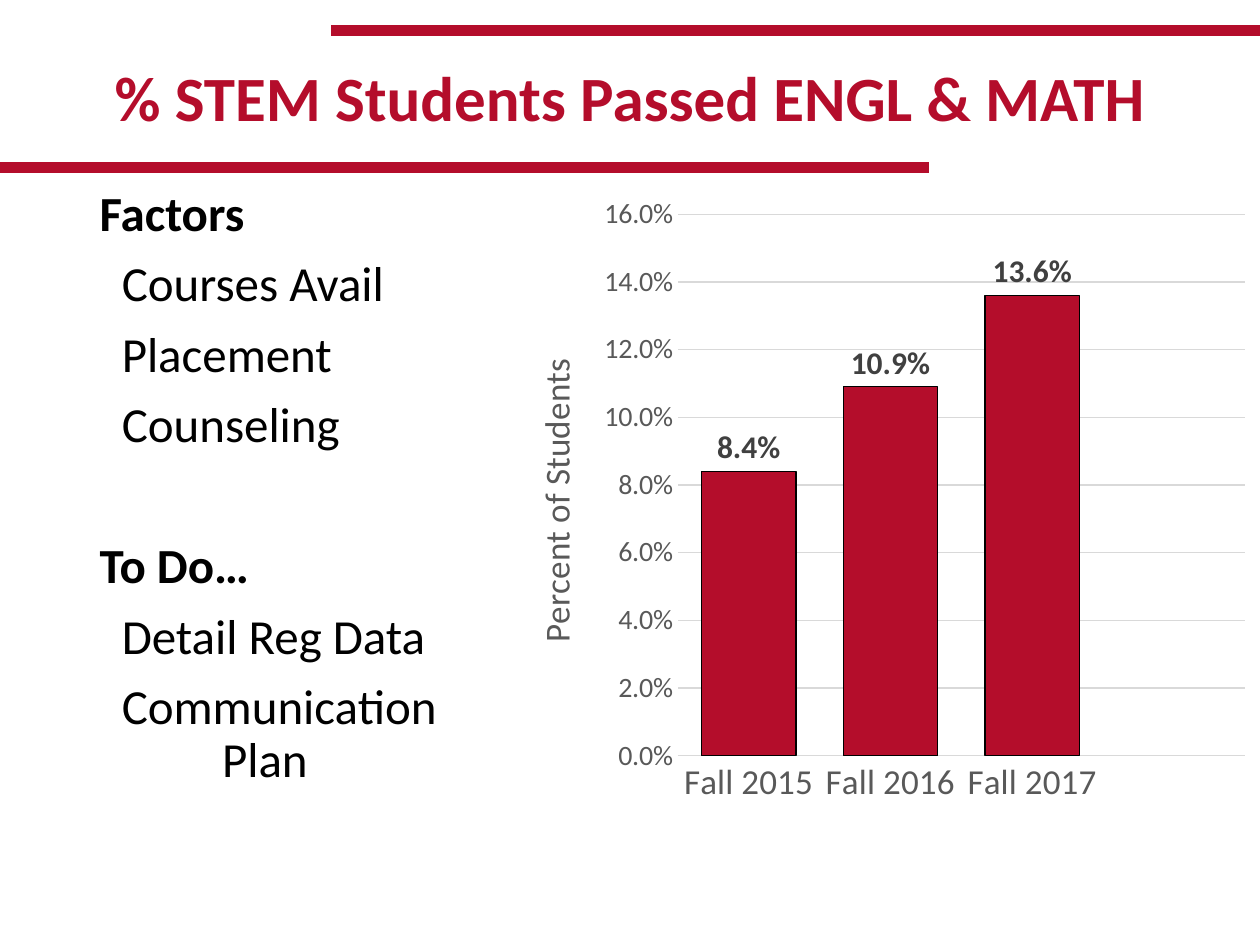
from dataclasses import dataclass

from lxml.etree import SubElement as Sub
from pptx import Presentation
from pptx.chart.data import CategoryChartData as ChartData
from pptx.dml.color import RGBColor as Rgb
from pptx.enum.chart import XL_CHART_TYPE as Kind
from pptx.enum.chart import XL_LABEL_POSITION as Spot
from pptx.enum.chart import XL_TICK_MARK as Tick
from pptx.enum.shapes import MSO_CONNECTOR as Conn
from pptx.enum.text import MSO_ANCHOR as Anchor
from pptx.enum.text import MSO_AUTO_SIZE as Fit
from pptx.enum.text import PP_ALIGN as Align
from pptx.oxml.ns import qn
from pptx.util import Pt


# Colours and type sizes
@dataclass(frozen=True)
class Theme:
    font: str = "Calibri"
    red: Rgb = Rgb(0xB4, 0x0D, 0x2B)
    black: Rgb = Rgb(0, 0, 0)
    dark: Rgb = Rgb(0x40, 0x40, 0x40)
    gray: Rgb = Rgb(0x59, 0x59, 0x59)
    pale: Rgb = Rgb(0xD9, 0xD9, 0xD9)
    title: int = 36
    body: int = 28
    axis: int = 20
    label: int = 18
    scale: int = 16


@dataclass(frozen=True)
class Rule:
    left: float
    right: float
    y: float


@dataclass(frozen=True)
class Item:
    text: str
    head: bool = False
    gap: float = 10
    hang: float = 12.7  # left edge of lines after the first


THEME = Theme()
WIDE, HIGH = 720, 540
EDGE, SPAN = 49.7, 620.6  # shared by title and list
INDENT = 12.7
RULES = [Rule(0, 530.6, 95.8), Rule(189.4, WIDE, 17.3)]
ITEMS = [
    Item("Factors", head=True),
    Item("Courses Avail"),
    Item("Placement"),
    Item("Counseling"),
    Item("To Do…", head=True, gap=50.4),
    Item("Detail Reg Data"),
    Item("Communication\vPlan", hang=70),
]
# The last slot is an empty one
BARS = [("Fall 2015", 0.084), ("Fall 2016", 0.109), ("Fall 2017", 0.136), ("", None)]
PLOT = {"x": 0.23, "y": 0.05, "w": 0.75, "h": 0.86}


def style(font, size: float, color: Rgb, bold: bool = False) -> None:
    font.name, font.size, font.bold = THEME.font, Pt(size), bold
    font.color.rgb = color


def stroke(line, color: Rgb, width: float = 0.75) -> None:
    line.color.rgb = color
    line.width = Pt(width)


def place(shape, left: float, top: float, width: float, height: float) -> None:
    shape.left, shape.top = Pt(left), Pt(top)
    shape.width, shape.height = Pt(width), Pt(height)


def draw_rule(slide, rule: Rule) -> None:
    line = slide.shapes.add_connector(
        Conn.STRAIGHT, Pt(rule.left), Pt(rule.y), Pt(rule.right), Pt(rule.y))
    stroke(line.line, THEME.red, 6)
    Sub(line._element.spPr, qn("a:effectLst"))


def draw_title(shape, text: str) -> None:
    place(shape, EDGE, 28.8, SPAN, 58.3)
    frame = shape.text_frame
    frame.text = text
    frame.auto_size, frame.vertical_anchor = Fit.NONE, Anchor.MIDDLE
    para = frame.paragraphs[0]
    para.alignment, para.line_spacing = Align.CENTER, 0.9
    style(para.runs[0].font, THEME.title, THEME.red, True)


def draw_list(shape, items: list[Item]) -> None:
    place(shape, EDGE, 104.4, SPAN, 381.6)
    frame = shape.text_frame
    frame.text = "\n".join(item.text.replace("\v", "\x0b") for item in items)
    frame.auto_size, frame.vertical_anchor = Fit.NONE, Anchor.TOP
    for para, item in zip(frame.paragraphs, items):
        para.line_spacing, para.space_before = 0.9, Pt(item.gap)
        left = 0 if item.head else item.hang
        first = 0 if item.head else INDENT - item.hang
        props = para._p.get_or_add_pPr()
        props.set("marL", str(Pt(left)))
        props.set("indent", str(Pt(first)))
        Sub(props, qn("a:buNone"))
        for run in para.runs:
            style(run.font, THEME.body, THEME.black, item.head)


def fix_plot(chart) -> None:
    area = chart._chartSpace.chart.plotArea
    for old in area.findall(qn("c:layout")):
        area.remove(old)
    box = Sub(area, qn("c:layout"))
    area.insert(0, box)
    man = Sub(box, qn("c:manualLayout"))
    Sub(man, qn("c:layoutTarget")).set("val", "inner")
    for key in "xy":
        Sub(man, qn(f"c:{key}Mode")).set("val", "edge")
    for key, val in PLOT.items():
        Sub(man, qn(f"c:{key}")).set("val", str(val))


def draw_chart(slide) -> None:
    data = ChartData(number_format="0.0%")
    data.categories = [name for name, _ in BARS]
    data.add_series("Series 1", [val for _, val in BARS])
    chart = slide.shapes.add_chart(
        Kind.COLUMN_CLUSTERED, Pt(288), Pt(104.4), Pt(432), Pt(360), data).chart
    chart.has_title = chart.has_legend = False
    style(chart.font, 10, THEME.black)
    fix_plot(chart)

    # Axes
    cat, val = chart.category_axis, chart.value_axis
    for axis, size in ((cat, THEME.axis), (val, THEME.scale)):
        axis.major_tick_mark = axis.minor_tick_mark = Tick.NONE
        style(axis.tick_labels.font, size, THEME.gray)
    stroke(cat.format.line, THEME.pale)
    val.format.line.fill.background()
    stroke(val.major_gridlines.format.line, THEME.pale)
    val.minimum_scale, val.maximum_scale, val.major_unit = 0, 0.16, 0.02
    val.tick_labels.number_format = "0.0%"
    val.tick_labels.number_format_is_linked = False
    frame = val.axis_title.text_frame
    frame.text = "Percent of Students"
    frame._txBody.bodyPr.set("rot", "-5400000")
    frame._txBody.bodyPr.set("vert", "horz")
    style(frame.paragraphs[0].runs[0].font, THEME.axis, THEME.gray)

    # Bars and their labels
    plot = chart.plots[0]
    plot.gap_width, plot.overlap, plot.vary_by_categories = 50, -6, False
    bars = plot.series[0]
    bars.format.fill.solid()
    bars.format.fill.fore_color.rgb = THEME.red
    stroke(bars.format.line, THEME.black)
    tags = bars.data_labels
    tags.show_value, tags.position = True, Spot.OUTSIDE_END
    tags.number_format, tags.number_format_is_linked = "0.0%", False
    style(tags.font, THEME.label, THEME.dark, True)


def main() -> None:
    deck = Presentation()
    deck.slide_width, deck.slide_height = Pt(WIDE), Pt(HIGH)
    slide = deck.slides.add_slide(deck.slide_layouts[1])
    for rule in RULES:
        draw_rule(slide, rule)
    draw_title(slide.shapes.title, "% STEM Students Passed ENGL & MATH")
    draw_list(slide.placeholders[1], ITEMS)
    draw_chart(slide)
    deck.save("out.pptx")


if __name__ == "__main__":
    main()
